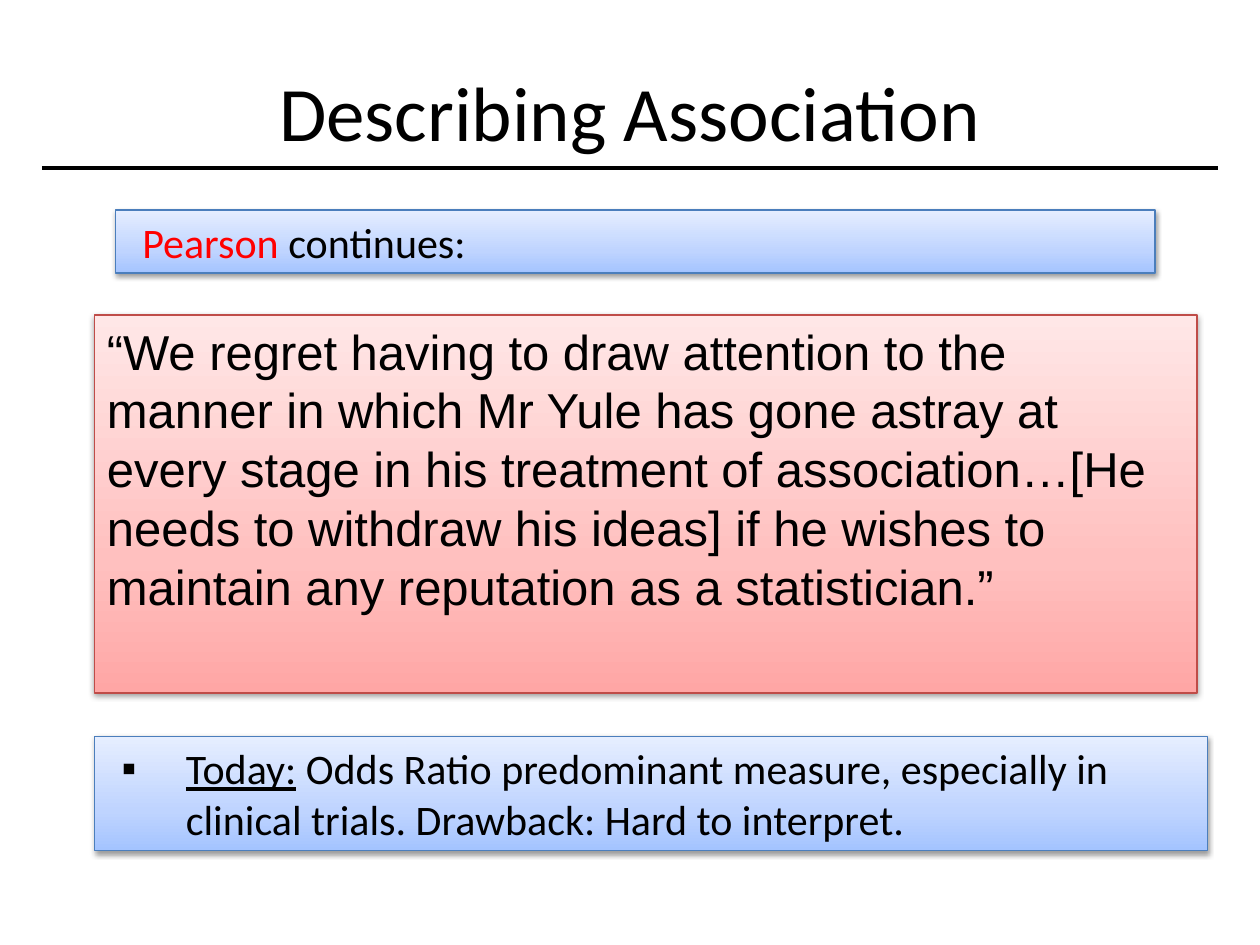
import copy
from dataclasses import dataclass

import pptx
import pptx.dml.color
import pptx.enum.shapes
import pptx.enum.text
import pptx.oxml
import pptx.oxml.ns
import pptx.util

PX = 9525
NS = 'xmlns:a="http://schemas.openxmlformats.org/drawingml/2006/main"'


@dataclass(frozen=True)
class Theme:
    """Colours, fonts and type sizes of the slide."""
    ink: str = "000000"
    accent: str = "FF0000"
    blue: tuple = ("A4C4FF", "BFD4FF", "E6EEFF")
    blue_edge: str = "4B7EBC"
    red: tuple = ("FFA6A5", "FFC0BF", "FFE7E7")
    red_edge: str = "BF4C48"
    stops: tuple = (0, 0.35, 1)
    heading_font: str = "Calibri"
    quote_font: str = "Arial"
    title_size: int = 44
    quote_size: int = 28
    note_size: int = 24


THEME = Theme()


def rgb(value):
    """Turn a hex string into a colour."""
    return pptx.dml.color.RGBColor.from_string(value)


def place(shape, box):
    """Move a shape to a box given in px."""
    shape.left, shape.top, shape.width, shape.height = (n * PX for n in box)


def add_run(paragraph, text, size, font=THEME.heading_font, color=THEME.ink, underline=None):
    """Add one formatted run."""
    run = paragraph.add_run()
    run.text = text
    run.font.name = font
    run.font.size = pptx.util.Pt(size)
    run.font.color.rgb = rgb(color)
    run.font.underline = underline


def style_panel(panel, box, colors, edge):
    """Give a panel its gradient, edge and shadow, and return its paragraph."""
    place(panel, box)
    panel.fill.gradient()
    panel.fill.gradient_angle = 90
    stop_list = panel._element.spPr.find(".//" + pptx.oxml.ns.qn("a:gsLst"))
    stop_list.insert(1, copy.deepcopy(stop_list[0]))
    for stop, position, color in zip(panel.fill.gradient_stops, THEME.stops, colors):
        stop.position = position
        stop.color.rgb = rgb(color)
    panel.line.color.rgb = rgb(edge)
    panel.line.width = pptx.util.Pt(0.75)
    panel.shadow.inherit = False
    panel._element.spPr.find(pptx.oxml.ns.qn("a:effectLst")).append(pptx.oxml.parse_xml(
        f'<a:outerShdw {NS} blurRad="40000" dist="20000" dir="5400000" rotWithShape="0">'
        '<a:srgbClr val="000000"><a:alpha val="38000"/></a:srgbClr></a:outerShdw>'))
    frame = panel.text_frame
    frame.word_wrap = True
    frame.auto_size = pptx.enum.text.MSO_AUTO_SIZE.NONE
    frame.vertical_anchor = pptx.enum.text.MSO_ANCHOR.TOP
    paragraph = frame.paragraphs[0]
    paragraph.alignment = pptx.enum.text.PP_ALIGN.LEFT
    return paragraph


def add_rectangle(slide, box):
    """Add a rectangle at a box."""
    return slide.shapes.add_shape(
        pptx.enum.shapes.MSO_SHAPE.RECTANGLE, *(n * PX for n in box))


def hang(paragraph, space):
    """Set the hanging indent and the space before."""
    properties = paragraph._p.get_or_add_pPr()
    properties.set("marL", str(60 * PX))
    properties.set("indent", str(-49 * PX))
    paragraph.space_before = pptx.util.Pt(space)
    return properties


def build_heading(slide, box):
    """Fill the title and rule it off."""
    left, top, width, height = box
    title = slide.shapes.title
    place(title, box)
    title.text_frame.vertical_anchor = pptx.enum.text.MSO_ANCHOR.MIDDLE
    paragraph = title.text_frame.paragraphs[0]
    paragraph.alignment = pptx.enum.text.PP_ALIGN.CENTER
    add_run(paragraph, "Describing Association", THEME.title_size)
    rule_y = (top + 104) * PX
    rule = slide.shapes.add_connector(
        pptx.enum.shapes.MSO_CONNECTOR.STRAIGHT,
        (left - 16) * PX, rule_y, (left + width + 16) * PX, rule_y)
    rule.line.color.rgb = rgb(THEME.ink)
    rule.line.width = pptx.util.Pt(2)
    rule._element.spPr.append(pptx.oxml.parse_xml(f"<a:effectLst {NS}/>"))


def build_speaker(slide, box):
    """Name the speaker of the quotation."""
    speaker = style_panel(add_rectangle(slide, box), box, THEME.blue, THEME.blue_edge)
    hang(speaker, 12)
    add_run(speaker, "Pearson", THEME.note_size, color=THEME.accent)
    add_run(speaker, " continues:", THEME.note_size)


def build_quote(slide, box):
    """Show the quotation."""
    quote = style_panel(add_rectangle(slide, box), box, THEME.red, THEME.red_edge)
    add_run(quote, "“We regret having to draw attention to the manner in which Mr Yule "
            "has gone astray at every stage in his treatment of association…[He needs to "
            "withdraw his ideas] if he wishes to maintain any reputation as a statistician.”",
            THEME.quote_size, THEME.quote_font)


def build_today(slide, box):
    """Fill the body with the present-day remark."""
    today = style_panel(slide.placeholders[1], box, THEME.blue, THEME.blue_edge)
    properties = hang(today, 6)
    properties.append(pptx.oxml.parse_xml(f'<a:buFont {NS} typeface="Arial"/>'))
    properties.append(pptx.oxml.parse_xml(f'<a:buChar {NS} char="▪"/>'))
    add_run(today, "Today:", THEME.note_size, underline=True)
    add_run(today, " Odds Ratio predominant measure, especially in clinical trials. "
            "Drawback: Hard to interpret.", THEME.note_size)


def main():
    """Build and save the slide."""
    deck = pptx.Presentation()
    deck.slide_width, deck.slide_height = 960 * PX, 720 * PX
    slide = deck.slides.add_slide(deck.slide_layouts[1])
    build_quote(slide, (72, 240, 840, 288))
    build_heading(slide, (48, 24, 864, 120))
    build_speaker(slide, (88, 160, 792, 48))
    build_today(slide, (72, 561, 848, 87))
    deck.save("out.pptx")


if __name__ == "__main__":
    main()
